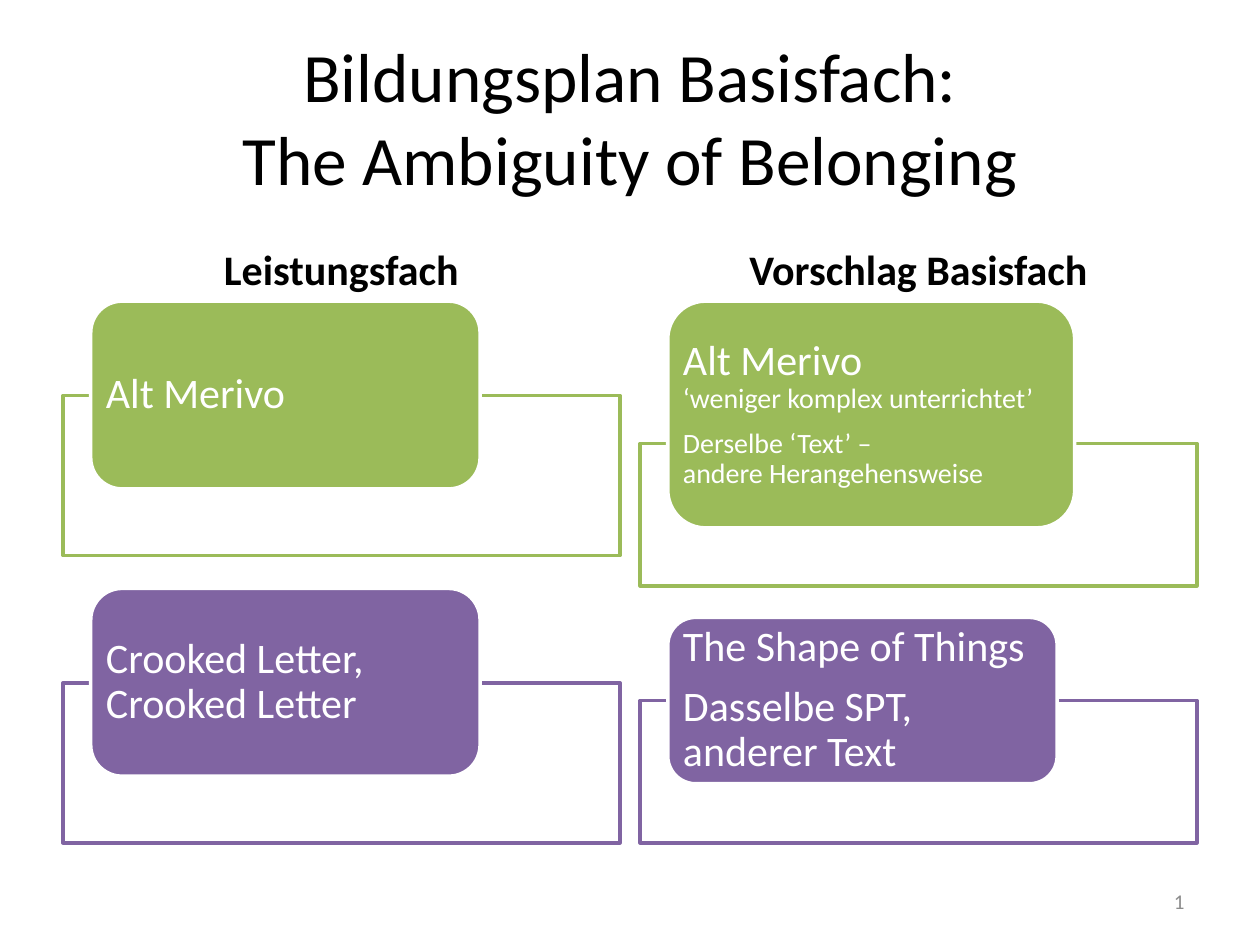
"""Build the slide that compares the advanced and the basic course."""
from lxml import etree
from pptx import Presentation
from pptx import util as u
from pptx.dml.color import RGBColor
from pptx.enum import shapes, text
from pptx.oxml.ns import qn

COLORS = {"black": "000000", "white": "FFFFFF", "green": "9BBB59", "purple": "8064A2", "gray": "8C8C8C"}
FONT = "Calibri"
INSET = 0.12
CORNER = 0.1667


def place(shape, left, top, width, height):
    shape.left, shape.top = u.Inches(left), u.Inches(top)
    shape.width, shape.height = u.Inches(width), u.Inches(height)


def add_lines(paragraph, lines, color, bold=False):
    for number, (words, size) in enumerate(lines):
        if number:
            paragraph.add_line_break()
        run = paragraph.add_run()
        run.text = words
        run.font.name, run.font.size, run.font.bold = FONT, u.Pt(size), bold
        run.font.color.rgb = RGBColor.from_string(COLORS[color])


deck = Presentation()
deck.slide_width, deck.slide_height = u.Inches(10), u.Inches(7.5)
slide = deck.slides.add_slide(deck.slide_layouts[4])
title, left_heading, left_content, right_heading, right_content = slide.placeholders
for unused in (left_content, right_content):
    unused.element.getparent().remove(unused.element)

place(title, 0.5, 0.3, 9, 1.25)
title.text_frame.vertical_anchor = text.MSO_ANCHOR.MIDDLE
title_paragraph = title.text_frame.paragraphs[0]
title_paragraph.alignment = text.PP_ALIGN.CENTER
add_lines(title_paragraph, [("Bildungsplan Basisfach:", 39.6), ("The Ambiguity of Belonging", 39.6)], "black")

courses = [
    (left_heading, "Leistungsfach", 0.5, [
        ("green", 3.14, 1.27, 2.39, 3.09, 1.49, [[("Alt Merivo", 24)]]),
        ("purple", 5.42, 1.27, 4.67, 3.09, 1.49, [[("Crooked Letter, Crooked Letter", 24)]]),
    ]),
    (right_heading, "Vorschlag Basisfach", 5.08, [
        ("green", 3.52, 1.13, 2.39, 3.23, 1.8, [
            [("Alt Merivo", 24), ("‘weniger komplex unterrichtet’", 16)],
            [("Derselbe ‘Text’ –", 16), ("andere Herangehensweise", 16)],
        ]),
        ("purple", 5.56, 1.13, 4.9, 3.09, 1.32, [
            [("The Shape of Things", 24)],
            [("Dasselbe SPT, anderer Text", 24)],
        ]),
    ]),
]

for heading, course, left, topics in courses:
    place(heading, left, 1.68, 4.42, 0.7)
    heading.text_frame.vertical_anchor = text.MSO_ANCHOR.BOTTOM
    heading_paragraph = heading.text_frame.paragraphs[0]
    heading_paragraph.alignment = text.PP_ALIGN.CENTER
    add_lines(heading_paragraph, [(course, 24)], "black", bold=True)

    for color, frame_top, frame_height, label_top, label_width, label_height, paragraphs in topics:
        frame = slide.shapes.add_shape(
            shapes.MSO_SHAPE.RECTANGLE, u.Inches(left), u.Inches(frame_top), u.Inches(4.42), u.Inches(frame_height))
        label = slide.shapes.add_shape(
            shapes.MSO_SHAPE.ROUNDED_RECTANGLE, u.Inches(left + 0.22), u.Inches(label_top),
            u.Inches(label_width), u.Inches(label_height))
        for box, fill, line in ((frame, "white", color), (label, color, "white")):
            box.shadow.inherit = False
            box.fill.solid()
            box.fill.fore_color.rgb = RGBColor.from_string(COLORS[fill])
            box.line.color.rgb = RGBColor.from_string(COLORS[line])
            box.line.width = u.Pt(2)
        frame_fill = frame.element.spPr.find(qn("a:solidFill"))
        etree.SubElement(frame_fill[0], qn("a:alpha"), val="90000")

        label.adjustments[0] = CORNER
        topic_text = label.text_frame
        topic_text.word_wrap = True
        topic_text.vertical_anchor = text.MSO_ANCHOR.MIDDLE
        topic_text.margin_left = topic_text.margin_right = u.Inches(INSET - 0.29 * CORNER * label_height)
        topic_text.margin_top = topic_text.margin_bottom = 0
        for number, lines in enumerate(paragraphs):
            paragraph = topic_text.add_paragraph() if number else topic_text.paragraphs[0]
            paragraph.alignment = text.PP_ALIGN.LEFT
            paragraph.line_spacing = 0.9
            if number < len(paragraphs) - 1:
                paragraph.space_after = u.Pt(8.4)
            add_lines(paragraph, lines, color="white")

page_number = slide.shapes.add_textbox(u.Inches(7.17), u.Inches(6.95), u.Inches(2.33), u.Inches(0.4))
page_number.text_frame.word_wrap = True
page_number.text_frame.vertical_anchor = text.MSO_ANCHOR.MIDDLE
page_paragraph = page_number.text_frame.paragraphs[0]
page_paragraph.alignment = text.PP_ALIGN.RIGHT
add_lines(page_paragraph, [("1", 12)], "gray")

deck.save("out.pptx")
